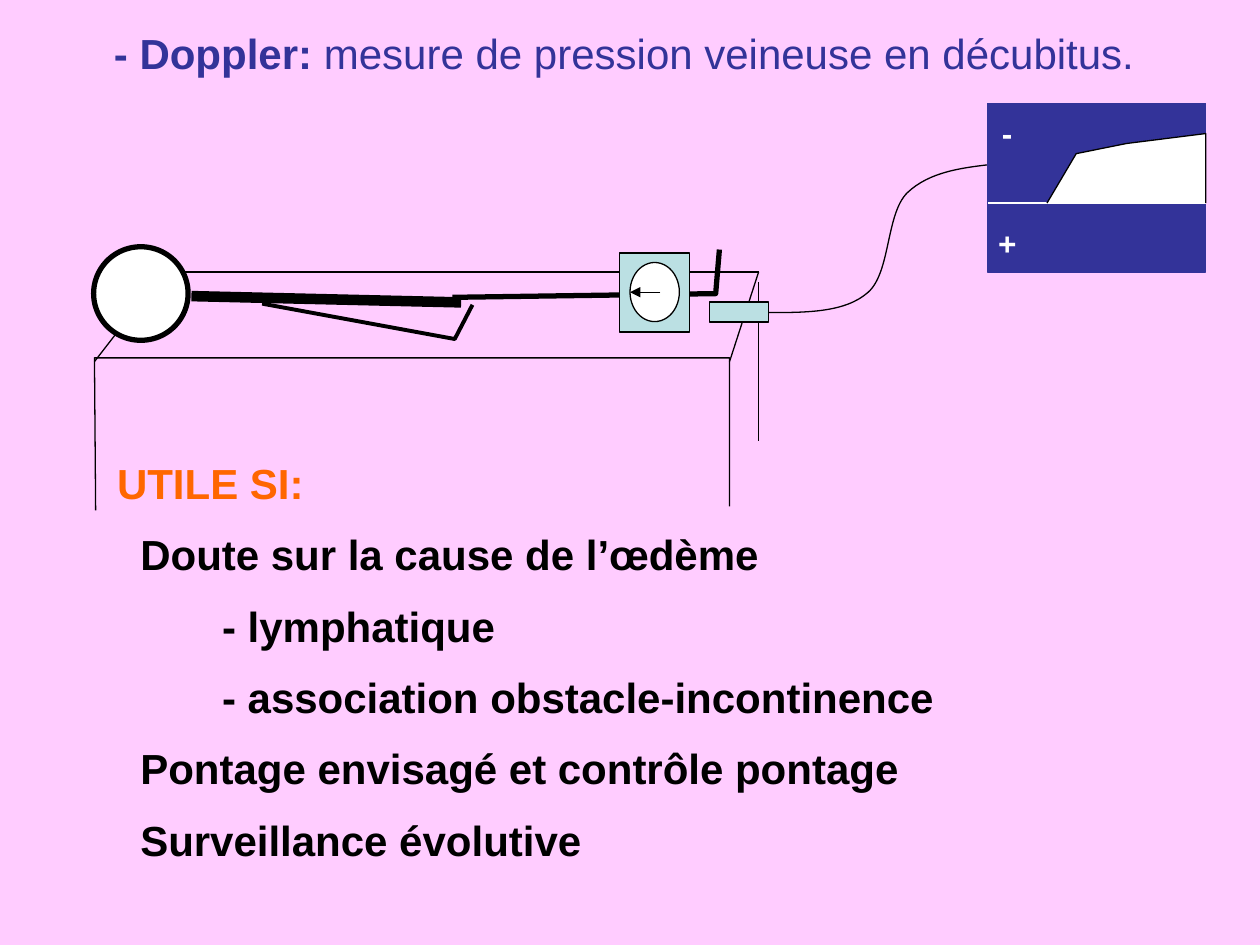
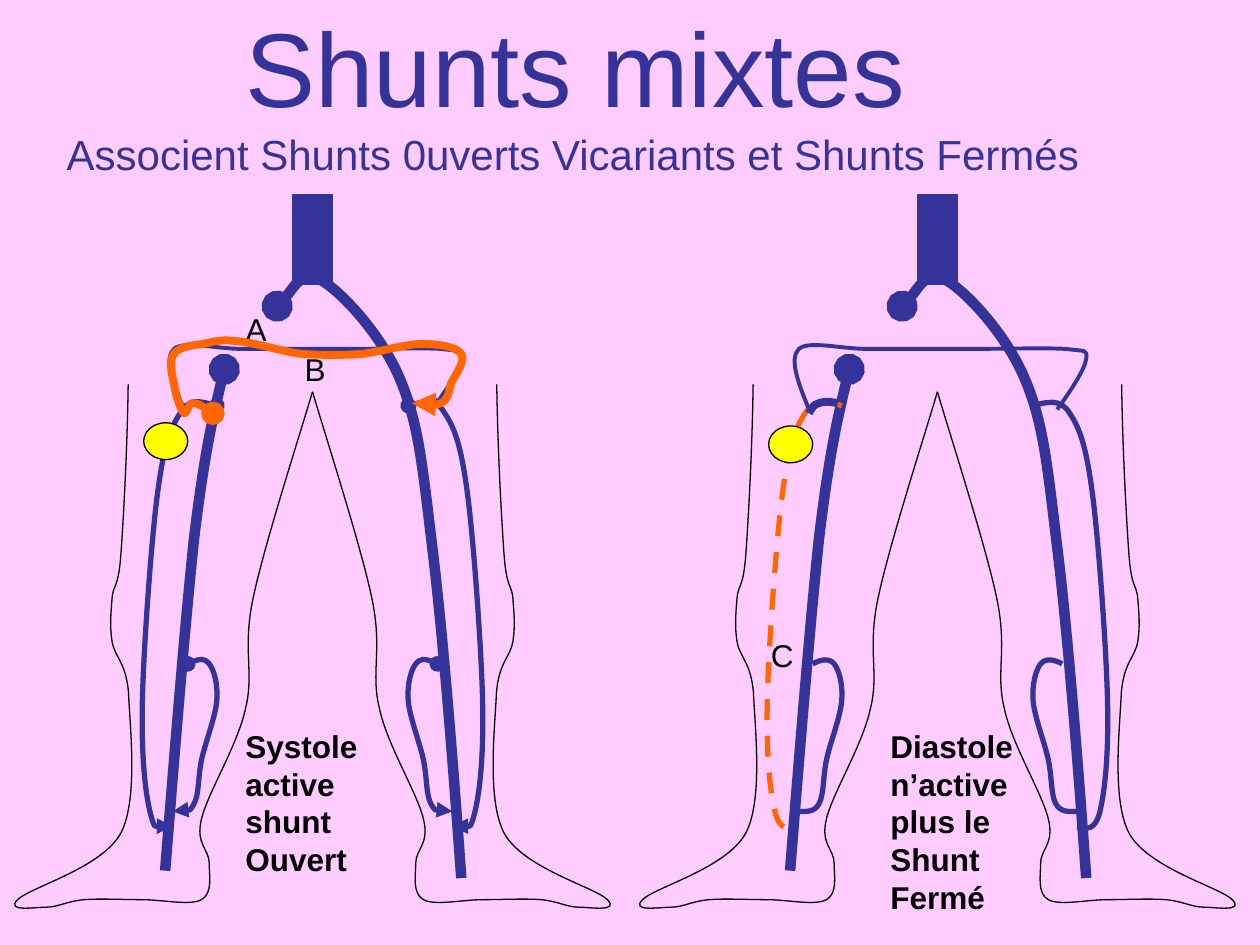
from pptx import Presentation
from pptx.dml.color import RGBColor
from pptx.enum.dml import MSO_LINE as Dash
from pptx.enum.shapes import MSO_CONNECTOR as Link, MSO_SHAPE as Preset
from pptx.enum.text import MSO_ANCHOR as Anchor, PP_ALIGN as Align
from pptx.oxml.ns import qn
from pptx.util import Pt
from lxml.etree import SubElement

NAVY, ORANGE, BLACK, WHITE = "333399", "FF6600", "000000", "FFFFFF"
PINK, PALE_BLUE, YELLOW = "FFCCFF", "BBE0E3", "FFFF00"

LEG_OUTLINE = [
    (105.3, 219.6), (105.8, 257), (108, 295.9), (109.4, 316.1),
    (110.9, 337), (113.8, 333.4), (114.5, 342), (115.2, 350.6), (115.9, 357.8), (114.5, 366.5),
    (113, 375.8), (106.6, 378), (105.1, 396), (104.4, 414.7), (99.4, 456.5), (109.4, 475.9),
    (120.2, 496.1), (161.3, 506.9), (168.5, 514.1), (175.7, 521.3), (158.4, 518.4), (151.9, 518.4),
    (145.4, 518.4), (139.7, 514.8), (130.3, 514.1), (121.7, 513.4), (108, 514.1), (97.2, 514.1),
    (85.7, 514.1), (69.8, 517.7), (63.4, 514.1), (56.9, 510.5), (59, 500.4), (59, 493.2),
    (59, 485.3), (67, 482.4), (63.4, 468), (59.8, 452.9), (42.5, 425.5), (38.2, 404.6),
    (33.1, 383.8), (40.3, 371.5), (33.8, 341.3), (27.4, 311), (7.2, 248.4), (0, 223.9),
]
LONG_VEIN = [
    (54.7, 231.8), (62.6, 229.7), (70.6, 227.5), (75.6, 236.2), (81.4, 244.8), (85, 254.9),
    (88.6, 282.2), (92.2, 309.6), (96.5, 370.1), (97.2, 400.3), (97.9, 430.6), (95.8, 451.4),
    (92.9, 463.7), (90, 475.2), (85, 473.8), (79.9, 472.3),
]
CALF_VEIN = [
    (71.3, 379.4), (67, 377), (61.9, 375.8), (59, 379.4), (56.2, 383), (54, 391),
    (54.7, 400.3), (55.4, 409.7), (61.2, 424.1), (63.4, 434.2), (65.5, 444.2), (64.8, 454.3),
    (67.7, 459.4), (70.6, 464.4), (74.9, 463.7), (79.9, 463.7),
]
LEFT_DEEP_VEIN = [
    (-50.4, 211), (-56.2, 235.4), (-61.9, 259.9), (-67.7, 308.2),
    (-72.7, 355.7), (-78.5, 426.2), (-84.2, 497.5),
]
RIGHT_DEEP_VEIN = [
    (-20.2, 175), (-15.8, 172.1), (-6.5, 154.1), (5.8, 160.6), (17.3, 167.8), (38.9, 190.8),
    (49.7, 216), (60.5, 241.2), (62.6, 264.6), (68.4, 312.5), (74.2, 360), (79.9, 430.6), (85, 501.8),
]
CROSS_VEIN = [
    (-73.4, 234), (-79.2, 219.6), (-85, 205.2), (-79.2, 199.4), (-73.4, 194.4), (-55.4, 199.4),
    (-39.6, 199.4), (-23.8, 199.4), (-2.2, 199.4), (17.3, 199.4), (36, 199.4), (62.6, 198.7),
    (73.4, 199.4), (85, 200.9), (85.7, 199.4), (85, 205.2), (84.2, 211), (76.3, 223.2), (68.4, 234),
]
OPEN_SHUNT = [
    (-56.9, 236.2), (-61.2, 233.3), (-65.5, 230.4), (-68.4, 230.4), (-71.3, 230.4), (-72, 237.6),
    (-73.4, 236.2), (-75.6, 234), (-78.5, 224.6), (-79.2, 218.9), (-80.6, 213.1), (-82.1, 205.9),
    (-79.2, 202.3), (-76.3, 198), (-68.4, 197.3), (-62.6, 196.6), (-56.2, 195.1), (-51.8, 193.7),
    (-42.5, 195.1), (-33.1, 195.8), (-17.3, 200.9), (-5.8, 202.3), (5.8, 203), (17.3, 203),
    (28.1, 202.3), (39.6, 200.9), (52.6, 196.6), (62.6, 196.6), (72, 196.6), (82.1, 198),
    (85, 202.3), (87.8, 205.9), (81.4, 214.6), (79.2, 218.9), (77.8, 223.9), (77.8, 228.2),
    (73.4, 230.4), (69.8, 231.8), (63.4, 231.1), (56.9, 230.4),
]
GROIN_STUB = [
    (-56.9, 230.4), (-60.5, 229.7), (-64.8, 229), (-67.7, 230.4),
    (-70.6, 231.1), (-72, 233.3), (-73.4, 236.2),
]
PROBE_CABLE = [
    (439.2, 178.6), (460.8, 178.6), (483.1, 178.6), (496.1, 167), (509, 155.5), (506.2, 122.4),
    (518.4, 110.2), (531.4, 97.9), (550.1, 95.8), (569.5, 93.6),
]


def colour(value):
    return RGBColor.from_string(value)


def around(axis, points, side=1):
    return [(axis + side * x, y) for x, y in points]


class Board:
    font = "Arial"

    def __init__(self):
        self.deck = Presentation()
        self.deck.slide_width, self.deck.slide_height = Pt(720), Pt(540)
        self.page = None

    def new_page(self):
        self.page = self.deck.slides.add_slide(self.deck.slide_layouts[6])
        self.page.background.fill.solid()
        self.page.background.fill.fore_color.rgb = colour(PINK)

    def stroke(self, shape, ink, width, head=None, tail=None, dash=None):
        shape.line.color.rgb = colour(ink)
        shape.line.width = Pt(width)
        if dash:
            shape.line.dash_style = dash
        edge = shape._element.spPr.find(qn("a:ln"))
        for tag, kind in (("a:headEnd", head), ("a:tailEnd", tail)):
            if kind:
                SubElement(edge, qn(tag), type=kind)

    def paint(self, shape, fill):
        shape.shadow.inherit = False
        if fill:
            shape.fill.solid()
            shape.fill.fore_color.rgb = colour(fill)
        else:
            shape.fill.background()

    def shape(self, preset, left, top, width, height, fill=None, ink=BLACK, weight=0.75):
        shape = self.page.shapes.add_shape(preset, Pt(left), Pt(top), Pt(width), Pt(height))
        self.paint(shape, fill)
        if ink:
            self.stroke(shape, ink, weight)
        else:
            shape.line.fill.background()
        return shape

    def line(self, start, end, weight=0.75, ink=BLACK, **ends):
        link = self.page.shapes.add_connector(
            Link.STRAIGHT, *(Pt(value) for value in (*start, *end)))
        self.stroke(link, ink, weight, **ends)
        SubElement(link._element.spPr, qn("a:effectLst"))

    def outline(self, points, weight=0.75, ink=BLACK, fill=None, **ends):
        corners = [(Pt(x), Pt(y)) for x, y in points]
        builder = self.page.shapes.build_freeform(*corners[0])
        builder.add_line_segments(corners[1:], close=False)
        shape = builder.convert_to_shape()
        self.paint(shape, fill)
        self.stroke(shape, ink, weight, **ends)
        return shape

    def curve(self, points, weight=0.75, ink=BLACK, **ends):
        shape = self.outline(points, weight, ink, **ends)
        track = shape._element.xpath(".//a:path")[0]
        steps = list(track)[1:]
        for first in range(0, len(steps), 3):
            bend = SubElement(track, qn("a:cubicBezTo"))
            for step in steps[first:first + 3]:
                bend.append(step[0])
                track.remove(step)

    def fill_para(self, para, spans, size, ink, bold=False, indent=0):
        para.font.name, para.font.size = self.font, Pt(size)
        para.font.bold, para.font.color.rgb = bold, colour(ink)
        para.line_spacing = Pt(1.2 * size)
        para._p.get_or_add_pPr().set("marL", str(Pt(indent)))
        for words, strong in spans:
            span = para.add_run()
            span.text = words
            if strong:
                span.font.bold = True

    def text(self, left, top, width, height, lines, size, ink=BLACK, bold=False):
        box = self.page.shapes.add_textbox(Pt(left), Pt(top), Pt(width), Pt(height))
        frame = box.text_frame
        frame.word_wrap = True
        for number, (spans, indent, tint) in enumerate(lines):
            para = frame.add_paragraph() if number else frame.paragraphs[0]
            self.fill_para(para, spans, size, tint or ink, bold, indent)
            para.space_after = Pt(size / 2 if number < len(lines) - 1 else 0)

    def label(self, left, top, width, height, words, size=18, ink=BLACK, bold=False):
        self.text(left, top, width, height, [([(words, False)], 0, None)], size, ink, bold)

    def sign(self, left, top, width, height, words):
        shape = self.shape(Preset.OVAL, left, top, width, height, ink=None)
        frame = shape.text_frame
        frame.word_wrap, frame.vertical_anchor = False, Anchor.MIDDLE
        frame.paragraphs[0].alignment = Align.CENTER
        self.fill_para(frame.paragraphs[0], [(words, False)], 18, WHITE, True)


def doppler_page(board):
    board.new_page()
    board.line((433.5, 161.3), (433.5, 252))
    board.line((433.5, 155.5), (99.4, 155.5))
    board.line((54, 206.6), (93.6, 155.5))
    board.line((433.5, 155.5), (416.9, 206.6))
    board.outline([(54.7, 291.6), (54, 204.5), (416.9, 204.5), (416.9, 289.4)])
    heading = [("- Doppler: ", True), ("mesure de pression veineuse en décubitus.", False)]
    board.text(18, 12.2, 680, 79, [(heading, 40, None)], 24, NAVY)

    board.shape(Preset.OVAL, 53.5, 141, 54, 53.5, WHITE, weight=3)
    board.line((109.4, 169.2), (263.5, 172.8), 6)
    board.outline([(258.5, 169.9), (409, 167.8), (411.1, 142.6)], 3)
    board.outline([(149.8, 173.5), (259.9, 193.7), (270, 174.2)], 2.25)

    board.shape(Preset.RECTANGLE, 354.2, 144.5, 39.8, 45.2, PALE_BLUE)
    board.shape(Preset.OVAL, 360, 150, 28.2, 33.8, WHITE)
    board.line((377.3, 167), (360, 167), tail="triangle")
    board.curve(PROBE_CABLE)
    board.shape(Preset.RECTANGLE, 405.4, 172.6, 33.8, 11.4, PALE_BLUE)

    board.shape(Preset.RECTANGLE, 564.5, 59, 124.5, 96.5, NAVY, NAVY)
    board.line((564.5, 116), (689, 116), ink=WHITE)
    board.sign(558.7, 64.8, 33.8, 22.3, "-")
    board.sign(553, 121.7, 45.4, 33.8, "+")
    board.outline([(598.3, 116), (615, 87.8), (643.7, 82), (689, 76.3), (689, 116)], fill=WHITE)

    uses = [
        ("UTILE SI:", 0, ORANGE),
        ("Doute sur la cause de l’œdème", 13.3, None),
        ("- lymphatique", 60, None),
        ("- association obstacle-incontinence", 60, None),
        ("Pontage envisagé et contrôle pontage", 13.3, None),
        ("Surveillance évolutive", 13.3, None),
    ]
    lines = [([(words, False)], indent, tint) for words, indent, tint in uses]
    board.text(59.8, 257.8, 601, 251, lines, 24, bold=True)


def legs(board, axis, systole):
    flow = {"head": "oval", "tail": "triangle"} if systole else {}
    for side in (-1, 1):
        board.curve(around(axis, LEG_OUTLINE, side))
    for deep_vein in (LEFT_DEEP_VEIN, RIGHT_DEEP_VEIN):
        board.curve(around(axis, deep_vein), 6, NAVY, head="oval")
    for side in (-1, 1):
        reflux = side < 0 and not systole
        board.curve(around(axis, LONG_VEIN, side), 3, ORANGE if reflux else NAVY,
                    dash=Dash.DASH if reflux else None, **flow)
        board.curve(around(axis, CALF_VEIN, side), 3, NAVY, **flow)
    board.shape(Preset.RECTANGLE, axis - 11.5, 111.5, 23, 51, NAVY, NAVY)
    board.curve(around(axis, CROSS_VEIN), 2.25, NAVY, **flow)
    if not systole:
        board.curve(around(axis, GROIN_STUB), 4.5, NAVY)
    board.shape(Preset.OVAL, axis - 96.5, 241.6 if systole else 243.4, 25.2, 21, YELLOW)


def shunts_page(board):
    board.new_page()
    board.label(133.2, -2.2, 556, 187, "Shunts mixtes", 60, NAVY)
    board.label(31, 69.8, 646.5, 36, "Associent Shunts 0uverts Vicariants et Shunts Fermés", 24, NAVY)
    legs(board, 535.7, systole=False)
    board.label(501.8, 411.8, 96.5, 115, "Diastole n’active plus le Shunt Fermé", bold=True)
    board.label(433.4, 360, 21, 29, "C")
    legs(board, 178.6, systole=True)
    board.label(133.2, 411.8, 96.5, 94, "Systole active shunt Ouvert", bold=True)
    board.label(167, 196.6, 23, 29, "B")
    board.label(133.2, 173.5, 21, 29, "A")
    board.curve(around(178.6, OPEN_SHUNT), 4.5, ORANGE, head="oval", tail="triangle")


def main():
    board = Board()
    doppler_page(board)
    shunts_page(board)
    board.deck.save("out.pptx")


if __name__ == "__main__":
    main()
